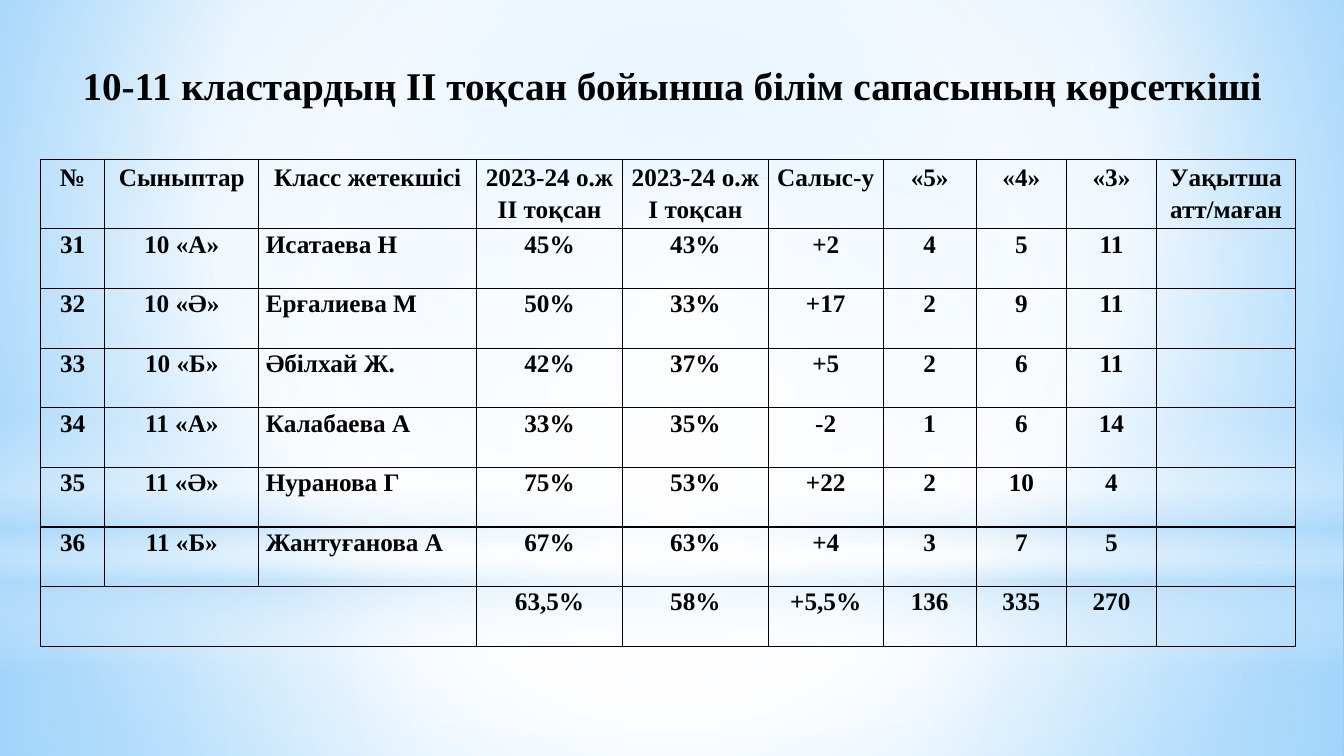
"""Build a slide with a table of class results for the second term."""
from pptx import Presentation
from pptx import util as u
from pptx.dml import color
from pptx.enum import shapes, text
from pptx.oxml import parse_xml
from pptx.oxml.ns import nsdecls, qn

WIDE, HIGH = 960, 540
FONT, INK = "Times New Roman", "000000"
TITLE = "10-11 кластардың ІІ тоқсан бойынша білім сапасының көрсеткіші"
HEAD = ["№", "Сыныптар", "Класс жетекшісі", "2023-24 о.ж\nІІ тоқсан",
        "2023-24 о.ж\nІ тоқсан", "Салыс-у", "«5»", "«4»", "«3»",
        "Уақытша\nатт/маған"]
ROWS = [
    ["31", "10 «А»", "Исатаева Н", "45%", "43%", "+2", "4", "5", "11", ""],
    ["32", "10 «Ә»", "Ерғалиева М", "50%", "33%", "+17", "2", "9", "11", ""],
    ["33", "10 «Б»", "Әбілхай Ж.", "42%", "37%", "+5", "2", "6", "11", ""],
    ["34", "11 «А»", "Калабаева А", "33%", "35%", "-2", "1", "6", "14", ""],
    ["35", "11 «Ә»", "Нуранова Г", "75%", "53%", "+22", "2", "10", "4", ""],
    ["36", "11 «Б»", "Жантуғанова А", "67%", "63%", "+4", "3", "7", "5", ""],
    ["", "", "", "63,5%", "58%", "+5,5%", "136", "335", "270", ""],
]
COLS = [46.1, 110, 155.6, 104.2, 104.2, 82, 66.6, 64.4, 64.4, 99.2]
LEFT, TOP, STEP = 28.8, 113.8, 42.6
NAME = 2

MID = (50, 50, 50, 50)
BACK = [(0, "9ED5FF", 100), (60, "FFFFFF", 100), (100, "5BB9FF", 100)]
BOX, OVAL = shapes.MSO_SHAPE.RECTANGLE, shapes.MSO_SHAPE.OVAL
GLOWS = [
    (BOX, 401.8, 138.2, MID,
     [(0, "FFFFFF", 91), (37, "FFFFFF", 76), (100, "B4DCFA", 79)]),
    (BOX, 0, 401.8, MID,
     [(0, "FFFFFF", 89), (48, "FFFFFF", 62), (100, "B4DCFA", 79)]),
    (BOX, 296.6, 180, None,
     [(0, "FFFFFF", 0), (29, "FFFFFF", 30), (45, "B4DCFA", 40),
      (55, "FFFFFF", 26), (65, "B4DCFA", 60), (100, "FFFFFF", 0)]),
    (OVAL, 126, 401.8, MID, [(0, "FFFFFF", 100), (56, "FFFFFF", 0)]),
]


def hue(code):
    return color.RGBColor.from_string(code)


def shade(fill, owner, stops, focus):
    fill.solid()
    marks = "".join(
        f'<a:gs pos="{pos * 1000}"><a:srgbClr val="{hue(code)}">'
        f'<a:alpha val="{alpha * 1000}"/></a:srgbClr></a:gs>'
        for pos, code, alpha in stops)
    if focus:
        sides = " ".join(f'{side}="{part * 1000}"'
                         for side, part in zip("ltrb", focus))
        flow = f'<a:path path="circle"><a:fillToRect {sides}/></a:path>'
    else:
        flow = '<a:lin ang="5400000" scaled="0"/>'
    plain = owner.find(qn("a:solidFill"))
    owner.replace(plain, parse_xml(
        f'<a:gradFill {nsdecls("a")} rotWithShape="1">'
        f'<a:gsLst>{marks}</a:gsLst>{flow}</a:gradFill>'))


def style(para, size, align):
    para.alignment = align
    font = para.font
    font.name, font.size, font.bold = FONT, u.Pt(size), True
    font.color.rgb = hue(INK)


def border(cell):
    props = cell._tc.get_or_add_tcPr()
    for spot, side in enumerate("LRTB"):
        props.insert(spot, parse_xml(
            f'<a:ln{side} {nsdecls("a")} w="{u.Pt(1)}"><a:solidFill>'
            f'<a:srgbClr val="{hue(INK)}"/></a:solidFill></a:ln{side}>'))


def write(cell, words, align, space):
    cell.text = words
    cell.margin_left = cell.margin_right = u.Pt(5)
    cell.margin_top = cell.margin_bottom = u.Pt(0)
    cell.fill.background()
    border(cell)
    for para in cell.text_frame.paragraphs:
        style(para, 18, align)
        para.line_spacing = space


def main():
    deck = Presentation()
    deck.slide_width, deck.slide_height = u.Pt(WIDE), u.Pt(HIGH)
    slide = deck.slides.add_slide(deck.slide_layouts[6])

    fill = slide.background.fill
    fill.solid()
    shade(fill, slide.element.find(".//" + qn("p:bgPr")), BACK,
          (20, 10, 20, 60))
    for kind, top, tall, focus, stops in GLOWS:
        glow = slide.shapes.add_shape(
            kind, u.Pt(0), u.Pt(top), u.Pt(WIDE), u.Pt(tall))
        glow.shadow.inherit = False
        glow.line.fill.background()
        shade(glow.fill, glow.element.spPr, stops, focus)

    center = text.PP_ALIGN.CENTER
    title = slide.shapes.add_textbox(
        u.Pt(0), u.Pt(36.7), u.Pt(WIDE), u.Pt(52.6)).text_frame
    title.word_wrap = True
    title.margin_top = u.Pt(7)
    title.text = TITLE
    style(title.paragraphs[0], 28, center)

    data = [HEAD] + ROWS
    table = slide.shapes.add_table(
        len(data), len(COLS), u.Pt(LEFT), u.Pt(TOP),
        u.Pt(sum(COLS)), u.Pt(STEP * len(data))).table
    table.first_row = table.horz_banding = False
    for col, width in zip(table.columns, COLS):
        col.width = u.Pt(width)
    for r, row in enumerate(data):
        table.rows[r].height = u.Pt(STEP)
        for c, words in enumerate(row):
            align = text.PP_ALIGN.JUSTIFY if r and c == NAME else center
            write(table.cell(r, c), words, align, 1.07 if r else 1.15)
    last = len(ROWS)
    table.cell(last, 0).merge(table.cell(last, NAME))

    deck.save("out.pptx")


if __name__ == "__main__":
    main()
